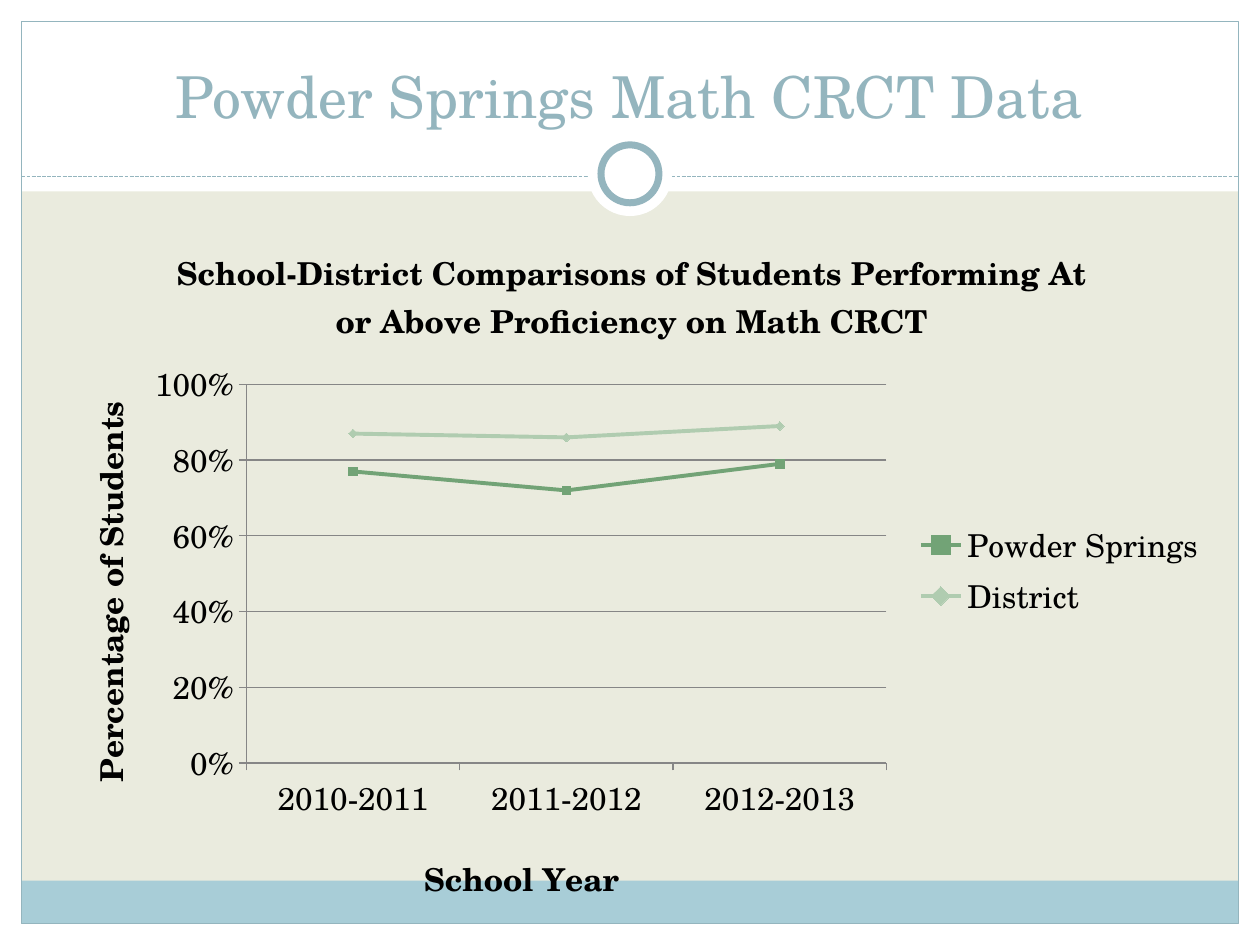
from dataclasses import dataclass

from lxml.etree import SubElement
from pptx import Presentation
from pptx.chart.data import CategoryChartData
from pptx.dml.color import RGBColor as Rgb
from pptx.enum.chart import XL_CHART_TYPE as ChartType
from pptx.enum.chart import XL_LEGEND_POSITION as LegendPosition
from pptx.enum.chart import XL_MARKER_STYLE as Marker
from pptx.enum.chart import XL_TICK_MARK as Tick
from pptx.enum.dml import MSO_LINE as Dash
from pptx.enum.shapes import MSO_CONNECTOR as Connector
from pptx.enum.shapes import MSO_SHAPE as Shape
from pptx.enum.text import MSO_ANCHOR as Anchor
from pptx.enum.text import PP_ALIGN as Align
from pptx.oxml.ns import qn
from pptx.util import Inches, Pt


@dataclass(frozen=True)
class Theme:
    font: str = "TeX Gyre Schola"
    paper: str = "EAEBDE"
    white: str = "FFFFFF"
    accent: str = "94B5BE"
    footer: str = "A8CDD7"
    text: str = "000000"
    grid: str = "868686"
    school: str = "72A376"
    district: str = "B0CCB0"
    title_size: float = 33
    chart_size: float = 18
    hairline: float = 0.75
    series_line: float = 2.25
    ring_line: float = 4


THEME = Theme()
WIDTH, HEIGHT = 10, 7.5
MARGIN = 0.17
INNER_WIDTH = WIDTH - 2 * MARGIN
INNER_HEIGHT = HEIGHT - 2 * MARGIN
RULE_Y = 1.4


def color(value):
    return Rgb.from_string(value)


def style_font(font, size, tint, bold=False):
    font.name = THEME.font
    font.size = Pt(size)
    font.bold = bold
    font.color.rgb = color(tint)


def style_line(line, tint, width):
    line.color.rgb = color(tint)
    line.width = Pt(width)


def add_panel(slide, kind, box, fill=None, outline=None, width=THEME.hairline):
    panel = slide.shapes.add_shape(kind, *map(Inches, box))
    panel.shadow.inherit = False
    if fill:
        panel.fill.solid()
        panel.fill.fore_color.rgb = color(fill)
    else:
        panel.fill.background()
    if outline:
        style_line(panel.line, outline, width)
    else:
        panel.line.fill.background()
    return panel


def add_disc(slide, diameter, center_y, **style):
    box = ((WIDTH - diameter) / 2, center_y - diameter / 2, diameter, diameter)
    return add_panel(slide, Shape.OVAL, box, THEME.white, **style)


def add_rule(slide):
    rule = slide.shapes.add_connector(
        Connector.STRAIGHT,
        *map(Inches, (MARGIN, RULE_Y, WIDTH - MARGIN, RULE_Y)),
    )
    style_line(rule.line, THEME.accent, THEME.hairline)
    rule.line.dash_style = Dash.SQUARE_DOT
    properties = rule.element.find(qn("p:spPr"))
    SubElement(properties, qn("a:effectLst"))
    properties.find(qn("a:ln")).find(qn("a:prstDash")).set("val", "sysDash")


def add_frame(slide):
    bands = (
        (0, HEIGHT - MARGIN, WIDTH, MARGIN),
        (0, 0, WIDTH, 1.52),
        (0, 0, MARGIN, HEIGHT),
        (WIDTH - MARGIN, 0, MARGIN, HEIGHT),
    )
    for band in bands:
        add_panel(slide, Shape.RECTANGLE, band, THEME.white)
    add_panel(slide, Shape.RECTANGLE, (MARGIN, 6.99, INNER_WIDTH, 0.34), THEME.footer)
    add_panel(
        slide,
        Shape.RECTANGLE,
        (MARGIN, MARGIN, INNER_WIDTH, INNER_HEIGHT),
        outline=THEME.accent,
    )
    add_rule(slide)
    add_disc(slide, 0.67, 1.38)
    return add_disc(slide, 0.46, 1.38, outline=THEME.accent, width=THEME.ring_line)


def set_title(slide, text, below):
    heading = slide.shapes.title
    heading.left, heading.top, heading.width, heading.height = map(
        Inches, (0.33, 0.25, 9.33, 0.83)
    )
    frame = heading.text_frame
    frame.word_wrap = True
    frame.vertical_anchor = Anchor.BOTTOM
    paragraph = frame.paragraphs[0]
    paragraph.alignment = Align.CENTER
    run = paragraph.add_run()
    run.text = text
    style_font(run.font, THEME.title_size, THEME.accent)
    below.element.addnext(heading.element)


def place(part, after=None, inner=False, **shares):
    for previous in part.findall(qn("c:layout")):
        part.remove(previous)
    layout = SubElement(part, qn("c:layout"))
    manual = SubElement(layout, qn("c:manualLayout"))
    if inner:
        SubElement(manual, qn("c:layoutTarget")).set("val", "inner")
    for axis in ("x", "y"):
        SubElement(manual, qn(f"c:{axis}Mode")).set("val", "edge")
    for key, share in shares.items():
        SubElement(manual, qn(f"c:{key}")).set("val", str(share))
    if after:
        part.find(qn(after)).addnext(layout)
    else:
        part.insert(0, layout)


def write_chart_title(chart_title, text, x, y):
    run = chart_title.text_frame.paragraphs[0].add_run()
    run.text = text
    style_font(run.font, THEME.chart_size, THEME.text, bold=True)
    place(chart_title.element, "c:tx", x=x, y=y)


def style_axis(axis):
    axis.major_tick_mark = Tick.OUTSIDE
    axis.minor_tick_mark = Tick.NONE
    style_line(axis.format.line, THEME.grid, THEME.hairline)


def style_series(series, tint, marker):
    series.smooth = False
    style_line(series.format.line, tint, THEME.series_line)
    series.marker.style = marker
    series.marker.size = 5
    series.marker.format.fill.solid()
    series.marker.format.fill.fore_color.rgb = color(tint)
    style_line(series.marker.format.line, tint, THEME.hairline)


def add_score_chart(slide):
    scores = CategoryChartData(number_format="0%")
    scores.categories = ("2010-2011", "2011-2012", "2012-2013")
    scores.add_series("Powder Springs", (0.77, 0.72, 0.79))
    scores.add_series("District", (0.87, 0.86, 0.89))
    box = map(Inches, (0.33, 1.67, 9.34, 5.66))
    chart = slide.shapes.add_chart(ChartType.LINE_MARKERS, *box, scores).chart
    style_font(chart.font, THEME.chart_size, THEME.text)
    chart.has_title = True
    write_chart_title(
        chart.chart_title,
        "School-District Comparisons of Students Performing At "
        "or Above Proficiency on Math CRCT",
        0.11,
        0.04,
    )

    years, share = chart.category_axis, chart.value_axis
    style_axis(years)
    style_axis(share)
    write_chart_title(years.axis_title, "School Year", 0.32, 0.89)
    write_chart_title(share.axis_title, "Percentage of Students", 0.03, 0.26)
    share.axis_title.element.find(".//" + qn("a:bodyPr")).set("rot", "-5400000")
    share.minimum_scale, share.maximum_scale, share.major_unit = 0, 1, 0.2
    share.tick_labels.number_format = "0%"
    share.tick_labels.number_format_is_linked = False
    share.has_major_gridlines = True
    style_line(share.major_gridlines.format.line, THEME.grid, THEME.hairline)

    plot = chart.plots[0]
    plot.vary_by_categories = False
    looks = ((THEME.school, Marker.SQUARE), (THEME.district, Marker.DIAMOND))
    for series, look in zip(plot.series, looks):
        style_series(series, *look)

    chart.has_legend = True
    chart.legend.position = LegendPosition.RIGHT
    chart.legend.include_in_layout = False
    legend = chart.element.find(".//" + qn("c:legend"))
    place(legend, "c:legendPos", x=0.74, y=0.43, w=0.25, h=0.15)
    area = chart.element.find(".//" + qn("c:plotArea"))
    place(area, inner=True, x=0.174, y=0.244, w=0.544, h=0.531)


def main():
    deck = Presentation()
    deck.slide_width, deck.slide_height = Inches(WIDTH), Inches(HEIGHT)
    slide = deck.slides.add_slide(deck.slide_layouts.get_by_name("Title Only"))
    slide.background.fill.solid()
    slide.background.fill.fore_color.rgb = color(THEME.paper)
    ring = add_frame(slide)
    set_title(slide, "Powder Springs Math CRCT Data", ring)
    add_score_chart(slide)
    deck.save("out.pptx")


if __name__ == "__main__":
    main()
